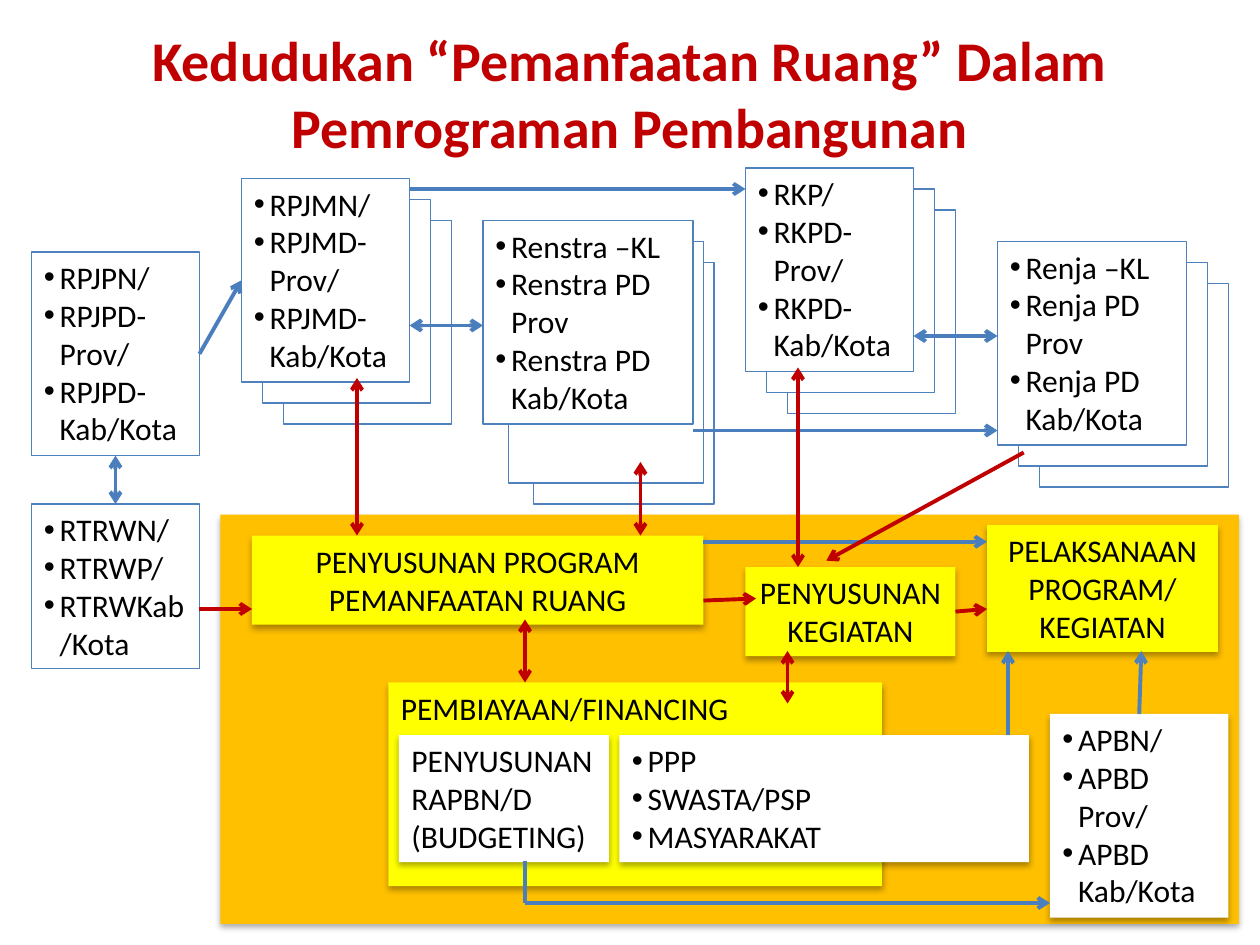
from lxml import etree
from pptx import Presentation
from pptx.dml.color import RGBColor
from pptx.enum.shapes import MSO_CONNECTOR, MSO_SHAPE
from pptx.enum.text import MSO_ANCHOR, MSO_AUTO_SIZE, PP_ALIGN
from pptx.oxml.ns import qn
from pptx.util import Cm, Pt

RECT = MSO_SHAPE.RECTANGLE
STRAIGHT = MSO_CONNECTOR.STRAIGHT
TOP, MIDDLE = MSO_ANCHOR.TOP, MSO_ANCHOR.MIDDLE
LEFT, CENTER = PP_ALIGN.LEFT, PP_ALIGN.CENTER
FIXED = MSO_AUTO_SIZE.NONE

WHITE = RGBColor(0xFF, 0xFF, 0xFF)
BLACK = RGBColor(0x00, 0x00, 0x00)
ORANGE = RGBColor(0xFF, 0xC0, 0x00)
YELLOW = RGBColor(0xFF, 0xFF, 0x00)
RED = RGBColor(0xC0, 0x00, 0x00)
EDGE = RGBColor(0x4F, 0x81, 0xBD)
BLUE = RGBColor(0x4B, 0x7E, 0xBC)

TALL = 19.4  # height of a box with five lines of text


def grid(steps):
    """Length of a number of grid steps, twelve to the inch."""
    return Cm(steps * 2.54 / 12)


def add(parent, tag, **attrs):
    return etree.SubElement(parent, qn(tag), attrs)


class Deck:
    font = "Calibri"
    size = Pt(18)

    def __init__(self):
        self.prs = Presentation()
        self.prs.slide_width, self.prs.slide_height = Cm(25.4), Cm(19.05)
        self.slide = self.prs.slides.add_slide(self.prs.slide_layouts[5])

    def style(self, par, size, color, align, bold=False):
        par.alignment = align
        for run in par.runs:
            font = run.font
            font.name, font.size, font.bold = self.font, size, bold
            font.color.rgb = color

    def title(self, text, *place):
        shape = self.slide.shapes.title
        shape.left, shape.top, shape.width, shape.height = map(grid, place)
        frame = shape.text_frame
        frame.text = text
        frame.auto_size, frame.vertical_anchor = FIXED, MIDDLE
        self.style(frame.paragraphs[0], Pt(32), RED, CENTER, True)

    def box(self, place, text="", fill=WHITE, edge=False, align=LEFT):
        """Rectangle with either a thin edge or a soft shadow."""
        shape = self.slide.shapes.add_shape(RECT, *map(grid, place))
        shape.shadow.inherit = False
        shape.fill.solid()
        shape.fill.fore_color.rgb = fill
        if edge:
            shape.line.color.rgb = EDGE
            shape.line.width = Pt(0.75)
        else:
            shape.line.fill.background()
            self.shade(shape)
        frame = shape.text_frame
        frame.text = text
        frame.word_wrap, frame.vertical_anchor = True, TOP
        for par in frame.paragraphs:
            self.style(par, self.size, BLACK, align)
        return shape

    def shade(self, shape):
        effects = shape._element.spPr.find(qn("a:effectLst"))
        outer = add(effects, "a:outerShdw", blurRad=str(Pt(3.5)),
                    dist=str(Pt(2.2)), dir="5400000", rotWithShape="0")
        color = add(outer, "a:srgbClr", val=str(BLACK))
        add(color, "a:alpha", val="32000")

    def bullets(self, place, items, edge=True):
        shape = self.box(place, "\n".join(items), edge=edge)
        for par in shape.text_frame.paragraphs:
            props = par._p.get_or_add_pPr()
            props.set("marL", str(grid(1.5)))
            props.set("indent", str(-grid(1.5)))
            add(props, "a:buFont", typeface="Arial")
            add(props, "a:buChar", char="•")
        return shape

    def stack(self, place, items, rear=None):
        """Bulleted box in front of two sheets, each two steps further out."""
        x, y, w, h = place
        for sheet in rear or [(x + d, y + d, w, h) for d in (4, 2)]:
            self.box(sheet, edge=True)
        return self.bullets(place, items)

    def arrow(self, start, end, color=BLUE, head=False, tail=True):
        """Line between ends given as (x, y) or as (shape, side)."""
        free = [isinstance(stop[0], (int, float)) for stop in (start, end)]
        points = [grid(n) for stop, loose in zip((start, end), free)
                  for n in (stop if loose else (0, 0))]
        line = self.slide.shapes.add_connector(STRAIGHT, *points)
        if not free[0]:
            line.begin_connect(*start)
        if not free[1]:
            line.end_connect(*end)
        line.line.color.rgb = color
        line.line.width = Pt(2.25)
        stroke = line.line._get_or_add_ln()
        if head:
            add(stroke, "a:headEnd", type="arrow")
        if tail:
            add(stroke, "a:tailEnd", type="arrow")
        add(line._element.spPr, "a:effectLst")


def regions(name):
    return [f"{name}/", f"{name}D-Prov/", f"{name}D-Kab/Kota"]


def offices(name):
    return [f"{name} –KL", f"{name} PD Prov", f"{name} PD Kab/Kota"]


def main():
    deck = Deck()
    deck.title("Kedudukan “Pemanfaatan Ruang” Dalam Pemrograman Pembangunan",
               6, 3.6, 108, 10.4)

    # Spatial use area
    deck.box((21, 49, 97, 39), fill=ORANGE)
    deck.box((37, 65, 47, 19.4), "PEMBIAYAAN/FINANCING", YELLOW)
    deck.box((24, 51, 43, 8.5), "PENYUSUNAN PROGRAM PEMANFAATAN RUANG",
             YELLOW, align=CENTER)
    action = deck.box((71, 54, 20, 8.5), "PENYUSUNAN KEGIATAN",
                      YELLOW, align=CENTER)
    deck.box((94, 50, 22, 12.1), "PELAKSANAAN PROGRAM/ KEGIATAN",
             YELLOW, align=CENTER)
    deck.box((38, 70, 20, 12.1), "PENYUSUNAN RAPBN/D (BUDGETING)")
    deck.bullets((59, 70, 39, 12.1), ["PPP", "SWASTA/PSP", "MASYARAKAT"],
                 edge=False)
    budget = deck.bullets((100, 68, 17, TALL),
                          ["APBN/", "APBD Prov/", "APBD Kab/Kota"], edge=False)

    # Plans
    spatial = deck.bullets((3, 48, 16, 15.7),
                           ["RTRWN/", "RTRWP/", "RTRWKab/Kota"])
    long = deck.bullets((3, 24, 16, TALL),
                        ["RPJPN/", "RPJPD-Prov/", "RPJPD-Kab/Kota"])
    medium = deck.stack((23, 17, 16, TALL),
                        ["RPJMN/", "RPJMD-Prov/", "RPJMD-Kab/Kota"])
    deck.stack((71, 16, 16, TALL), regions("RKP"))
    deck.stack((46, 21, 20, TALL), offices("Renstra"),
               [(50.8, 25, 17.2, 23), (48.4, 23, 18.6, 23)])
    deck.stack((95, 23, 18, TALL), offices("Renja"))

    # Flow between plans
    deck.arrow((long, 2), (spatial, 0), head=True)
    deck.arrow((long, 3), (medium, 1))
    deck.arrow((39, 18), (71, 18))
    deck.arrow((39, 31), (46, 31), head=True)
    deck.arrow((87, 32), (95, 32), head=True)
    deck.arrow((66, 41), (95, 41))

    # Flow within the spatial use area
    deck.arrow((67, 51.6), (94, 51.6))
    deck.arrow((50, 82), (50, 86), tail=False)
    deck.arrow((50, 86), (100, 86))
    deck.arrow((96, 70), (96, 62))
    deck.arrow((budget, 0), (108.7, 62), EDGE)
    deck.arrow((action, 3), (94, 58), RED)
    deck.arrow((67, 57.2), (72, 57), RED)
    deck.arrow((19, 58), (24, 58), RED)
    deck.arrow((97.5, 43.1), (78.7, 53.4), RED)
    for x, top, bottom in ((34, 36, 51), (50, 59, 65), (61, 44, 51),
                           (76, 35, 54), (75, 62, 67)):
        deck.arrow((x, top), (x, bottom), RED, head=True)

    deck.prs.save("out.pptx")


if __name__ == "__main__":
    main()
